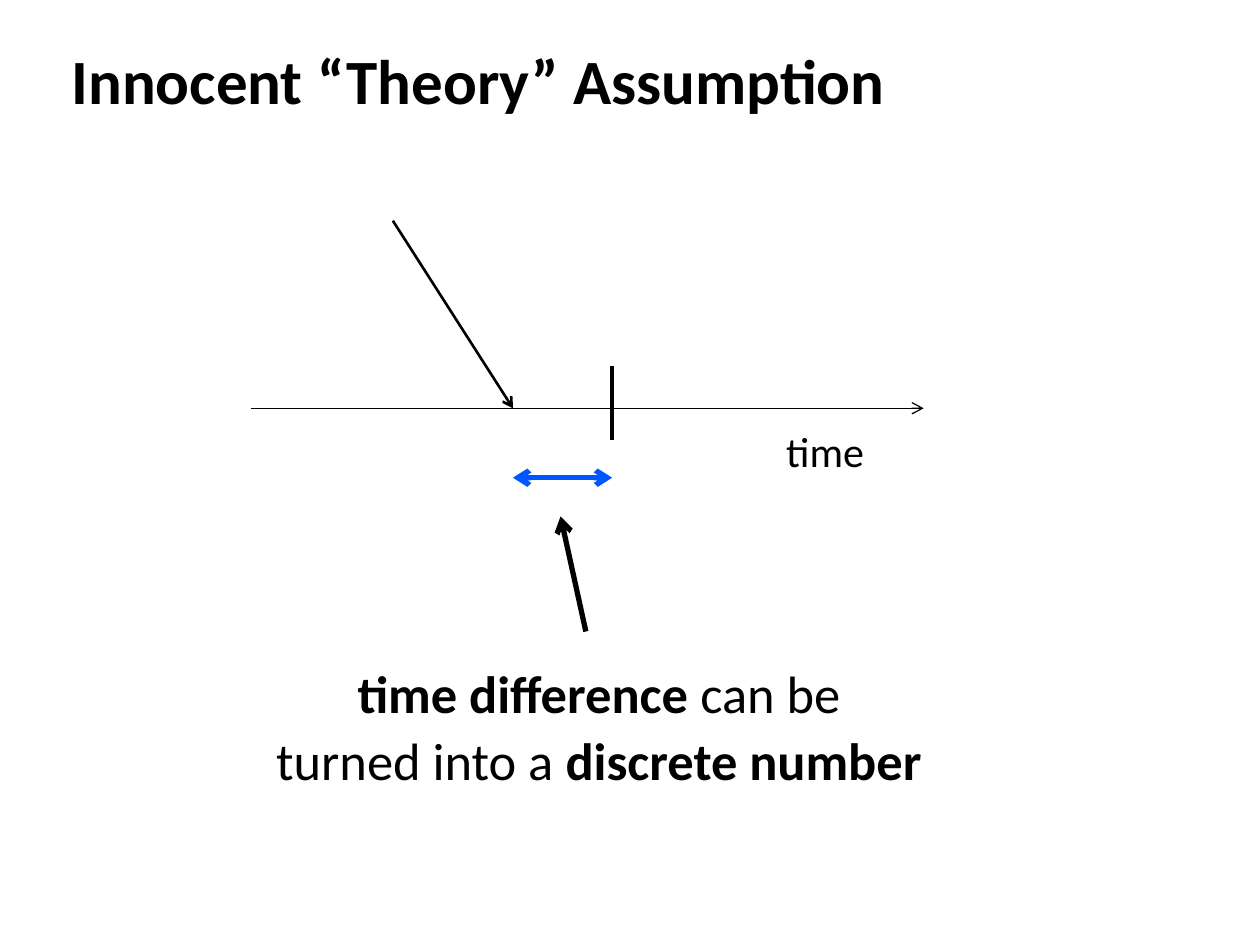
from dataclasses import dataclass

from lxml import etree
from pptx import Presentation
from pptx.dml.color import RGBColor
from pptx.enum.shapes import MSO_CONNECTOR
from pptx.enum.text import MSO_ANCHOR, PP_ALIGN
from pptx.oxml.ns import qn
from pptx.util import Cm, Pt

STRAIGHT = MSO_CONNECTOR.STRAIGHT
LEFT, CENTER = PP_ALIGN.LEFT, PP_ALIGN.CENTER
TOP, MIDDLE = MSO_ANCHOR.TOP, MSO_ANCHOR.MIDDLE
FONT = "Calibri"
BLACK, BLUE = "000000", "0156FF"
TITLE_LAYOUT = 5

# Shared positions on the time axis, in cm
AXIS_Y = 8.23
EVENT_X, TICK_X = 10.34, 12.34
DIFFERENCE_Y = 9.63


@dataclass
class Stroke:
    start: tuple[float, float]
    end: tuple[float, float]
    width: float
    color: str = BLACK
    arrows: tuple[str, ...] = ("tailEnd",)


@dataclass
class Run:
    text: str
    bold: bool = False


def rgb(color: str) -> RGBColor:
    return RGBColor.from_string(color)


def draw_stroke(slide, stroke: Stroke) -> None:
    points = [Cm(value) for value in (*stroke.start, *stroke.end)]
    connector = slide.shapes.add_connector(STRAIGHT, *points)
    connector.line.width = Pt(stroke.width)
    connector.line.color.rgb = rgb(stroke.color)
    properties = connector._element.spPr
    outline = properties.find(qn("a:ln"))
    for arrow in stroke.arrows:
        etree.SubElement(outline, qn(f"a:{arrow}"), type="arrow")
    etree.SubElement(properties, qn("a:effectLst"))


def add_runs(paragraph, runs: list[Run], size: float) -> None:
    for part in runs:
        run = paragraph.add_run()
        run.text = part.text
        run.font.name = FONT
        run.font.size = Pt(size)
        run.font.bold = part.bold
        run.font.color.rgb = rgb(BLACK)


def draw_text(slide, box: tuple[float, ...], lines: list[list[Run]],
              size: float, align=LEFT) -> None:
    frame = slide.shapes.add_textbox(*map(Cm, box)).text_frame
    frame.word_wrap = True
    frame.vertical_anchor = TOP
    for index, runs in enumerate(lines):
        paragraph = frame.add_paragraph() if index else frame.paragraphs[0]
        paragraph.alignment = align
        paragraph.line_spacing = 0.9
        paragraph.space_before = Pt(size * 0.2)
        add_runs(paragraph, runs, size)


def draw_title(slide, text: str) -> None:
    title = slide.shapes.title
    title.left, title.top = Cm(1.19), Cm(0.64)
    title.width, title.height = Cm(23.34), Cm(1.9)
    title.text_frame.vertical_anchor = MIDDLE
    heading = title.text_frame.paragraphs[0]
    heading.alignment = LEFT
    add_runs(heading, [Run(text, bold=True)], 36)


STROKES = [
    # Time axis, event arrow and clock tick
    Stroke((5.05, AXIS_Y), (18.62, AXIS_Y), 0.75),
    Stroke((7.92, 4.45), (EVENT_X, AXIS_Y), 1.5),
    Stroke((TICK_X, 7.37), (TICK_X, 8.86), 2, arrows=()),
    # Time difference and the pointer to it
    Stroke((TICK_X, DIFFERENCE_Y), (EVENT_X, DIFFERENCE_Y), 3, BLUE,
           ("headEnd", "tailEnd")),
    Stroke((11.81, 12.73), (11.3, 10.41), 3),
]

CLAIM = [
    [Run("time difference", bold=True), Run(" can be")],
    [Run("turned into a "), Run("discrete number", bold=True)],
]


def main() -> None:
    deck = Presentation()
    deck.slide_width, deck.slide_height = Cm(25.4), Cm(19.05)
    slide = deck.slides.add_slide(deck.slide_layouts[TITLE_LAYOUT])

    draw_title(slide, "Innocent “Theory” Assumption")
    for stroke in STROKES:
        draw_stroke(slide, stroke)

    # Claim below the diagram, and the axis label
    draw_text(slide, (5.05, 13.34, 14.05, 3), CLAIM, 30, CENTER)
    draw_text(slide, (15.6, 8.56, 2.21, 1.07), [[Run("time")]], 24)

    deck.save("out.pptx")


if __name__ == "__main__":
    main()
